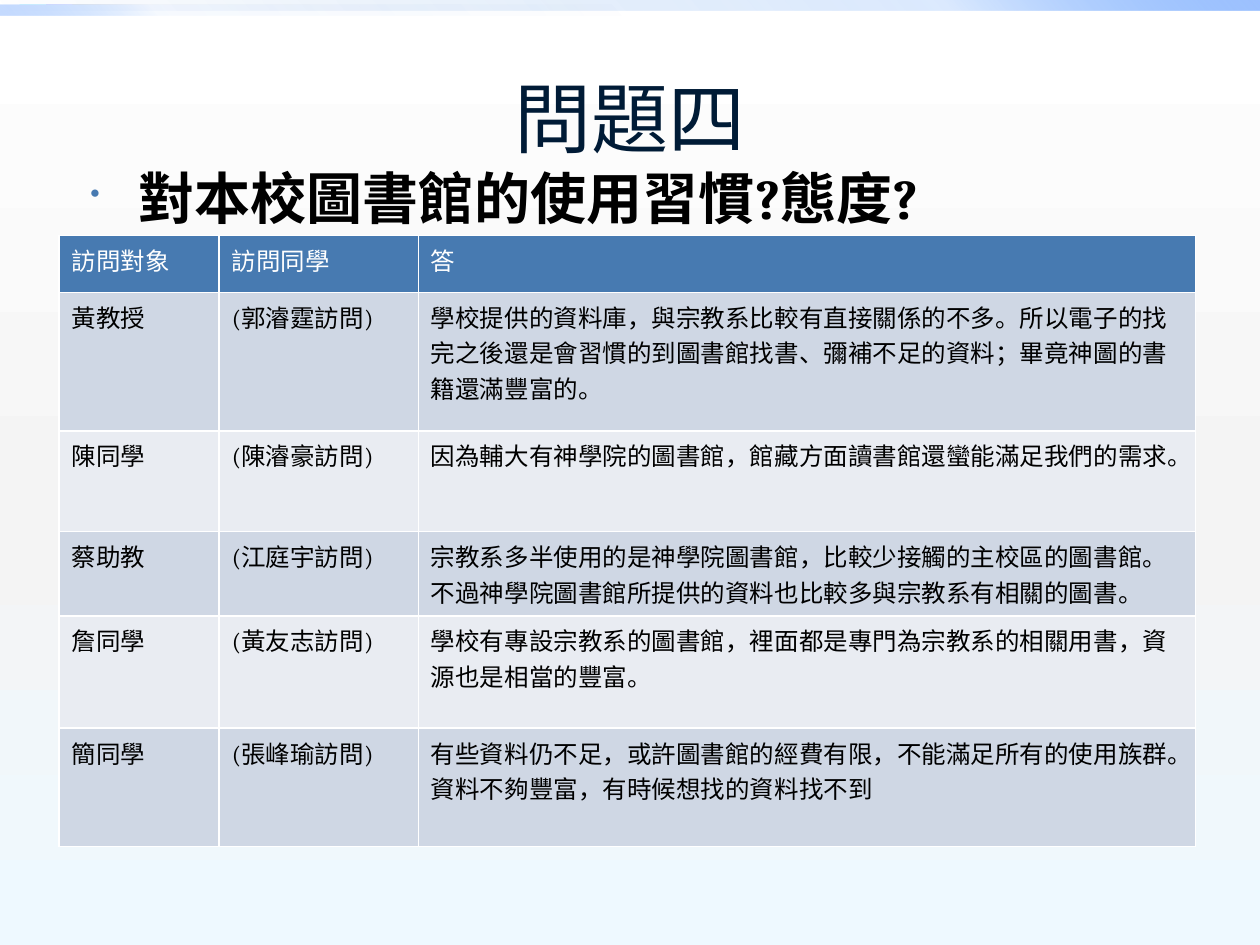
from pptx import Presentation
from pptx.dml.color import RGBColor
from pptx.enum.shapes import MSO_SHAPE
from pptx.enum.text import MSO_ANCHOR, PP_ALIGN
from pptx.oxml.ns import qn
from pptx.util import Inches, Pt
from lxml.etree import SubElement

COLORS = {"navy": "001B36", "head": "477AB1", "odd": "CFD7E4", "even": "E9ECF2",
          "white": "FFFFFF", "black": "000000", "gray": "F4F4F4", "ice": "EEF9FF",
          "deep": "0058B7", "mid": "4F95FF", "pale": "9EC2FF"}
TITLE = "問題四"
TOPIC = "對本校圖書館的使用習慣?態度?"
ROWS = [
    ("訪問對象", "訪問同學", "答"),
    ("黃教授", "(郭濬霆訪問)", "學校提供的資料庫，與宗教系比較有直接關係的不多。所以電子的找完之後還是會習慣的到圖書館找書、彌補不足的資料；畢竟神圖的書籍還滿豐富的。"),
    ("陳同學", "(陳濬豪訪問)", "因為輔大有神學院的圖書館，館藏方面讀書館還蠻能滿足我們的需求。"),
    ("蔡助教", "(江庭宇訪問)", "宗教系多半使用的是神學院圖書館，比較少接觸的主校區的圖書館。不過神學院圖書館所提供的資料也比較多與宗教系有相關的圖書。"),
    ("詹同學", "(黃友志訪問)", "學校有專設宗教系的圖書館，裡面都是專門為宗教系的相關用書，資源也是相當的豐富。"),
    ("簡同學", "(張峰瑜訪問)", "有些資料仍不足，或許圖書館的經費有限，不能滿足所有的使用族群。\n資料不夠豐富，有時候想找的資料找不到"),
]
WIDTHS = [1.27, 1.58, 6.17]
HEIGHTS = [0.45, 1.1, 0.8, 0.67, 0.89, 0.94]
BACK = [(0, "white", 100), (55, "gray", 100), (100, "ice", 100)]
BARS = [
    ((0, 0, 10, 0.08), 315, [(0, "deep", 0), (75, "mid", 20), (100, "pale", 100)]),
    ((0, 0.04, 5, 0.08), 135, [(0, "deep", 0), (75, "mid", 5), (100, "pale", 60)]),
]
FONTS = {
    "title": {"name": "Roboto", "size": Pt(44), "bold": False},
    "topic": {"name": "Cambria", "size": Pt(32), "bold": True},
    "cell": {"name": "Cambria", "size": Pt(14), "bold": False},
}


def color(name):
    return RGBColor.from_string(COLORS[name])


def style(para, kind, hue):
    for key, value in FONTS[kind].items():
        setattr(para.font, key, value)
    para.font.color.rgb = color(hue)


def blend(fill, root, angle, stops):
    fill.gradient()
    grad = next(root.iter(qn("a:gradFill")))
    grad.find(qn("a:lin")).set("ang", str(angle * 60000))
    items = grad.find(qn("a:gsLst"))
    for old in list(items):
        items.remove(old)
    for place, hue, alpha in stops:
        stop = SubElement(items, qn("a:gs"), pos=str(place * 1000))
        tint = SubElement(stop, qn("a:srgbClr"), val=COLORS[hue])
        if alpha < 100:
            SubElement(tint, qn("a:alpha"), val=str(alpha * 1000))


def write(slide, box, text, kind, hue):
    frame = slide.shapes.add_textbox(*map(Inches, box)).text_frame
    frame.word_wrap = True
    para = frame.paragraphs[0]
    para.text = text
    return frame, para


def bullet(para):
    props = para._p.get_or_add_pPr()
    props.set("marL", str(Inches(0.38)))
    props.set("indent", str(-Inches(0.38)))
    tint = SubElement(props, qn("a:buClr"))
    SubElement(tint, qn("a:srgbClr"), val=COLORS["head"])
    SubElement(props, qn("a:buSzPct"), val="50000")
    SubElement(props, qn("a:buChar"), char="•")


def main():
    deck = Presentation()
    deck.slide_width, deck.slide_height = Inches(10), Inches(7.5)
    slide = deck.slides.add_slide(deck.slide_layouts[6])
    blend(slide.background.fill, slide.element, 90, BACK)

    for box, angle, stops in BARS:
        bar = slide.shapes.add_shape(MSO_SHAPE.RECTANGLE, *map(Inches, box))
        bar.shadow.inherit = False
        bar.line.fill.background()
        blend(bar.fill, bar.element, angle, stops)

    frame, para = write(slide, (0.5, 0.3, 9, 1.25), TITLE, "title", "navy")
    frame.vertical_anchor = MSO_ANCHOR.MIDDLE
    para.alignment = PP_ALIGN.CENTER
    style(para, "title", "navy")

    frame, para = write(slide, (0.62, 1.25, 9, 4.95), TOPIC, "topic", "black")
    bullet(para)
    style(para, "topic", "black")

    box = map(Inches, (0.47, 1.87, sum(WIDTHS), sum(HEIGHTS)))
    table = slide.shapes.add_table(len(ROWS), len(WIDTHS), *box).table
    for col, width in zip(table.columns, WIDTHS):
        col.width = Inches(width)
    for r, (row, height) in enumerate(zip(ROWS, HEIGHTS)):
        table.rows[r].height = Inches(height)
        for c, text in enumerate(row):
            cell = table.cell(r, c)
            cell.text = text
            cell.fill.solid()
            cell.fill.fore_color.rgb = color("head" if r == 0 else "odd" if r % 2 else "even")
            for para in cell.text_frame.paragraphs:
                style(para, "cell", "black" if r else "white")

    deck.save("out.pptx")


if __name__ == "__main__":
    main()
